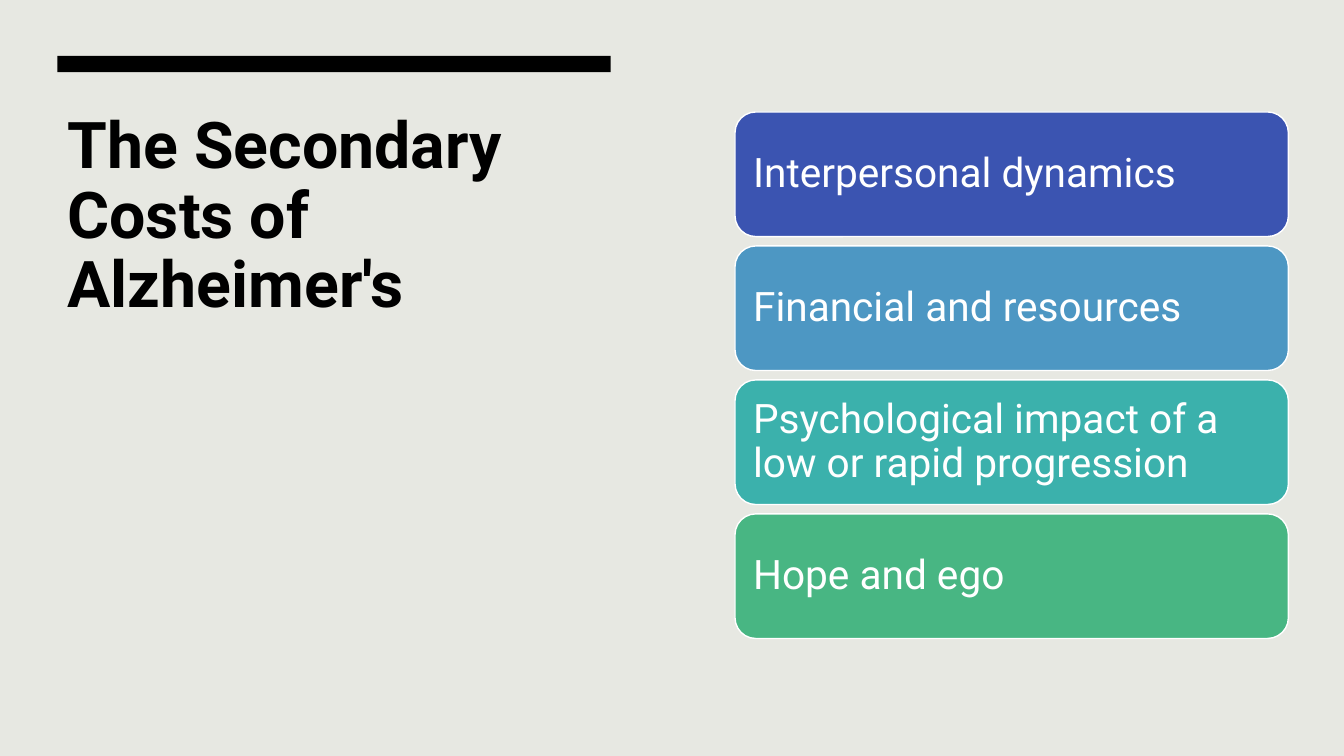
from pptx import Presentation
from pptx.dml.color import RGBColor
from pptx.enum.shapes import MSO_SHAPE
from pptx.enum.text import MSO_ANCHOR, MSO_AUTO_SIZE, PP_ALIGN
from pptx.util import Pt


def rgb(value):
    return RGBColor.from_string(value)


class Deck:
    font = "Roboto"
    black = "000000"
    white = "FFFFFF"

    def __init__(self, width, height, background):
        self.prs = Presentation()
        self.prs.slide_width, self.prs.slide_height = Pt(width), Pt(height)
        self.s = self.prs.slides.add_slide(self.prs.slide_layouts[5])
        fill = self.s.background.fill
        fill.solid()
        fill.fore_color.rgb = rgb(background)

    def set_text(self, tf, text, size, color, anchor, bold=False):
        tf.text = text
        tf.word_wrap = True
        tf.auto_size = MSO_AUTO_SIZE.NONE
        tf.vertical_anchor = anchor
        p = tf.paragraphs[0]
        p.alignment = PP_ALIGN.LEFT
        p.line_spacing = 0.9
        for r in p.runs:
            r.font.name = self.font
            r.font.size = Pt(size)
            r.font.bold = bold
            r.font.color.rgb = rgb(color)

    def title(self, text, left, top, width, height):
        sp = self.s.shapes.title
        sp.left, sp.top, sp.width, sp.height = Pt(left), Pt(top), Pt(width), Pt(height)
        self.set_text(sp.text_frame, text, 46, self.black, MSO_ANCHOR.TOP, bold=True)

    def block(self, kind, left, top, width, height, color):
        sp = self.s.shapes.add_shape(kind, Pt(left), Pt(top), Pt(width), Pt(height))
        sp.shadow.inherit = False
        sp.fill.solid()
        sp.fill.fore_color.rgb = rgb(color)
        sp.line.fill.background()
        return sp

    def bar(self, left, top, width, height):
        self.block(MSO_SHAPE.RECTANGLE, left, top, width, height, self.black)

    def card(self, text, left, top, width, height, color):
        sp = self.block(MSO_SHAPE.ROUNDED_RECTANGLE, left, top, width, height, color)
        sp.line.color.rgb = rgb(self.white)
        sp.line.width = Pt(1)
        tf = sp.text_frame
        tf.margin_left = tf.margin_right = tf.margin_top = tf.margin_bottom = Pt(8.6)
        self.set_text(tf, text, 29, self.white, MSO_ANCHOR.MIDDLE)


def main():
    column = 395.3
    costs = [
        ("Interpersonal dynamics", "3B54B1"),
        ("Financial and resources", "4D97C3"),
        ("Psychological impact of a low or rapid progression", "3BB1AC"),
        ("Hope and ego", "48B683"),
    ]
    deck = Deck(960, 540, "E7E8E2")
    deck.title("The Secondary Costs of Alzheimer's", 41, 77, column, 163.4)
    deck.bar(41, 40, column, 11.5)
    for i, (text, color) in enumerate(costs):
        deck.card(text, 525, 80 + i * 95.7, column, 89, color)
    deck.prs.save("out.pptx")


if __name__ == "__main__":
    main()
